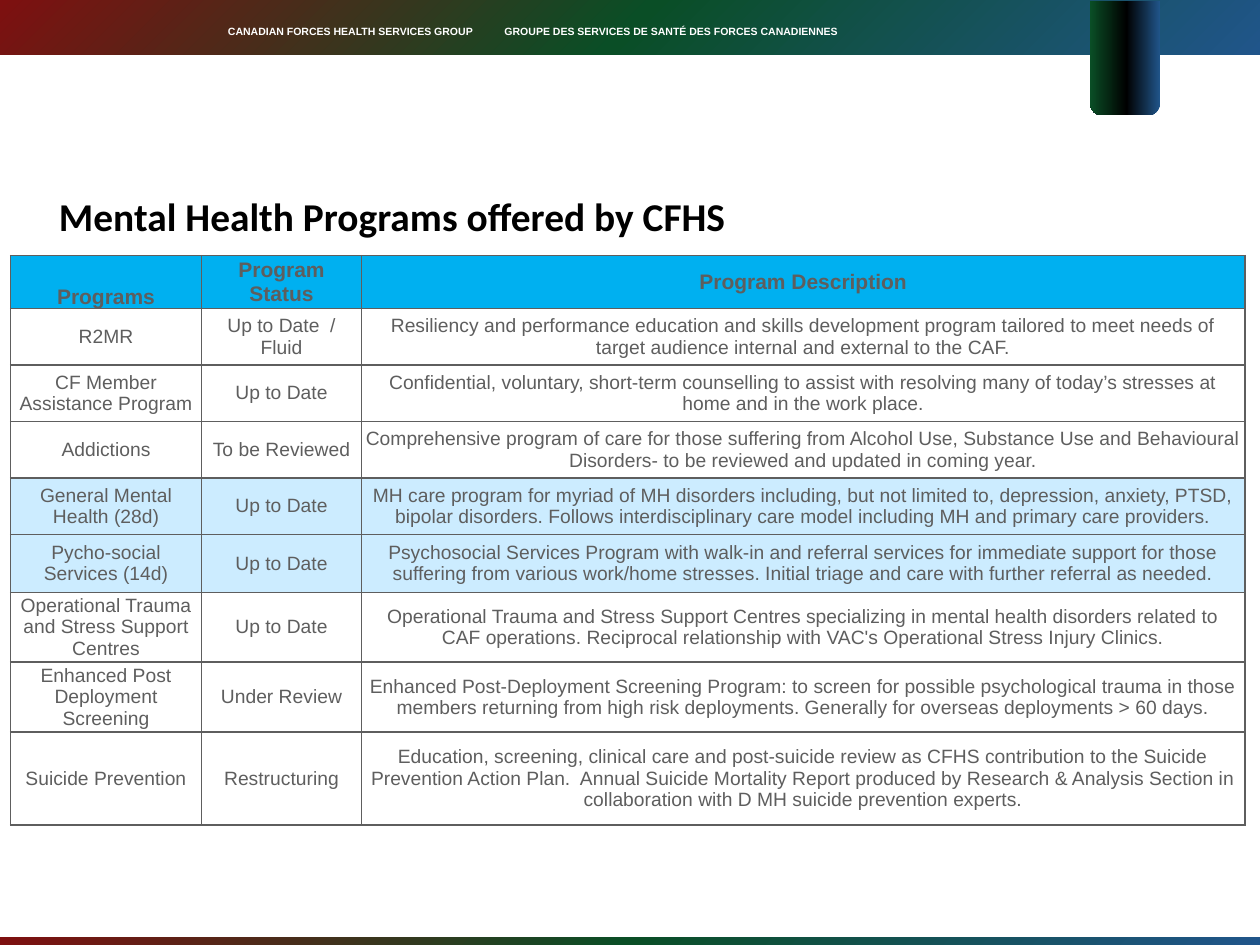
from dataclasses import dataclass

from pptx import Presentation
from pptx.dml.color import RGBColor
from pptx.enum.shapes import MSO_SHAPE
from pptx.enum.text import MSO_ANCHOR, PP_ALIGN
from pptx.oxml import parse_xml
from pptx.oxml.ns import nsdecls
from pptx.util import Pt

RECT = MSO_SHAPE.RECTANGLE
TAB = MSO_SHAPE.ROUND_2_SAME_RECTANGLE
LEFT, CENTER = PP_ALIGN.LEFT, PP_ALIGN.CENTER
MIDDLE, BOTTOM = MSO_ANCHOR.MIDDLE, MSO_ANCHOR.BOTTOM


@dataclass(frozen=True)
class Theme:
    red: str = "7E1010"
    green: str = "0A4E26"
    blue: str = "20558A"
    black: str = "000000"
    white: str = "FFFFFF"
    gray: str = "5E5E5E"
    sky: str = "00B0F0"
    pale: str = "CCECFF"
    body: str = "Arial"
    head: str = "Calibri"
    tiny: float = 6
    small: float = 11
    label: float = 12
    title: float = 22.5


THEME = Theme()


@dataclass(frozen=True)
class Band:
    box: tuple
    stops: tuple
    angle: int = 45
    kind: int = RECT
    turn: int = 0


@dataclass(frozen=True)
class Program:
    name: str
    status: str
    about: str
    height: float
    fill: str = ""


FLAG = ((0, THEME.red), (50, THEME.green), (100, THEME.blue))
BANDS = (
    Band((0, 0, 720, 31), FLAG),
    Band((622.8, 0.6, 40.2, 65.4),
         ((0, THEME.blue), (48, THEME.black), (100, THEME.green)), 0, TAB, 180),
    Band((0, 535.6, 720, 4.4), FLAG),
)
WIDTHS = (109.2, 91.4, 504.8)
HEADS = Program("Programs", "Program Status", "Program Description", 30.3, THEME.sky)
ROWS = (
    Program("R2MR", "Up to Date  / Fluid",
            "Resiliency and performance education and skills development program "
            "tailored to meet needs of target audience internal and external to the CAF.", 32.3),
    Program("CF Member Assistance Program", "Up to Date",
            "Confidential, voluntary, short-term counselling to assist with resolving "
            "many of today’s stresses at home and in the work place.", 32.3),
    Program("Addictions", "To be Reviewed",
            "Comprehensive program of care for those suffering from Alcohol Use, "
            "Substance Use and Behavioural Disorders- to be reviewed and updated "
            "in coming year.", 32.3),
    Program("General Mental Health (28d)", "Up to Date",
            "MH care program for myriad of MH disorders including, but not limited to, "
            "depression, anxiety, PTSD, bipolar disorders. Follows interdisciplinary "
            "care model including MH and primary care providers.", 32.3, THEME.pale),
    Program("Pycho-social Services (14d)", "Up to Date",
            "Psychosocial Services Program with walk-in and referral services for "
            "immediate support for those suffering from various work/home stresses. "
            "Initial triage and care with further referral as needed.", 33, THEME.pale),
    Program("Operational Trauma and Stress Support Centres", "Up to Date",
            "Operational Trauma and Stress Support Centres specializing in mental "
            "health disorders related to CAF operations. Reciprocal relationship "
            "with VAC's Operational Stress Injury Clinics.", 40),
    Program("Enhanced Post Deployment Screening", "Under Review",
            "Enhanced Post-Deployment Screening Program: to screen for possible "
            "psychological trauma in those members returning from high risk "
            "deployments. Generally for overseas deployments > 60 days.", 39.8),
    Program("Suicide Prevention", "Restructuring",
            "Education, screening, clinical care and post-suicide review as CFHS "
            "contribution to the Suicide Prevention Action Plan.  Annual Suicide "
            "Mortality Report produced by Research & Analysis Section in "
            "collaboration with D MH suicide prevention experts.", 53.3),
)


def write(frame, text: str, *, size: float, color: str, font: str = THEME.body,
          bold: bool = False, align=LEFT, space: float = 1, tab: int = 0) -> None:
    para = frame.paragraphs[0]
    para.alignment = align
    para.line_spacing = space
    if tab:
        para._p.get_or_add_pPr().append(parse_xml(
            f'<a:tabLst {nsdecls("a")}><a:tab pos="{Pt(tab)}" algn="l"/></a:tabLst>'))
    run = para.add_run()
    run.text = text
    run.font.size = Pt(size)
    run.font.name = font
    run.font.bold = bold
    run.font.color.rgb = RGBColor.from_string(color)


def add_text(slide, box: tuple, text: str, insets: tuple, **style) -> None:
    frame = slide.shapes.add_textbox(*map(Pt, box)).text_frame
    frame.word_wrap = True
    frame.vertical_anchor = MIDDLE
    frame.margin_left, frame.margin_top, frame.margin_right, frame.margin_bottom = map(Pt, insets)
    write(frame, text, **style)


def add_band(slide, band: Band) -> None:
    shape = slide.shapes.add_shape(band.kind, *map(Pt, band.box))
    shape.rotation = band.turn
    if band.kind == TAB:
        shape.adjustments[0] = 0.18
    stops = "".join(f'<a:gs pos="{pos * 1000}"><a:srgbClr val="{color}"/></a:gs>'
                    for pos, color in band.stops)
    shape._element.spPr.append(parse_xml(
        f'<a:gradFill {nsdecls("a")} rotWithShape="1"><a:gsLst>{stops}</a:gsLst>'
        f'<a:lin ang="{band.angle * 60000}" scaled="0"/></a:gradFill>'))
    shape.line.fill.background()
    shape.shadow.inherit = False


def fill_cell(cell, text: str, fill: str, anchor, **style) -> None:
    cell.margin_left = cell.margin_right = Pt(2.2)
    cell.margin_top = cell.margin_bottom = Pt(0)
    cell.vertical_anchor = anchor
    props = cell._tc.get_or_add_tcPr()
    for side in "LRTB":
        props.append(parse_xml(
            f'<a:ln{side} {nsdecls("a")} w="{Pt(1)}"><a:solidFill>'
            f'<a:srgbClr val="{THEME.gray}"/></a:solidFill></a:ln{side}>'))
    if fill:
        cell.fill.solid()
        cell.fill.fore_color.rgb = RGBColor.from_string(fill)
    else:
        cell.fill.background()
    write(cell.text_frame, text, color=THEME.gray, align=CENTER, **style)


def add_grid(slide, rows: tuple) -> None:
    high = sum(row.height for row in rows)
    table = slide.shapes.add_table(len(rows), len(WIDTHS), Pt(6), Pt(146),
                                   Pt(sum(WIDTHS)), Pt(high)).table
    table.first_row = table.horz_banding = False
    for col, width in zip(table.columns, WIDTHS):
        col.width = Pt(width)
    for i, row in enumerate(rows):
        table.rows[i].height = Pt(row.height)
        head = i == 0
        for j, text in enumerate((row.name, row.status, row.about)):
            fill_cell(table.cell(i, j), text, row.fill,
                      BOTTOM if head and j == 0 else MIDDLE,
                      size=THEME.label if head else THEME.small, bold=head)


def main() -> None:
    deck = Presentation()
    deck.slide_width, deck.slide_height = Pt(720), Pt(540)
    slide = deck.slides.add_slide(deck.slide_layouts[6])
    for band in BANDS:
        add_band(slide, band)
    add_text(slide, (-0.7, 14.4, 610, 7.2),
             "CANADIAN FORCES HEALTH SERVICES GROUP\t"
             "GROUPE DES SERVICES DE SANTÉ DES FORCES CANADIENNES",
             (131, 0, 0, 0), size=THEME.tiny, color=THEME.white, bold=True, tab=158)
    add_grid(slide, (HEADS, *ROWS))
    add_text(slide, (26.6, 104.4, 589, 41), "Mental Health Programs offered by CFHS",
             (7.2, 7.2, 7.2, 7.2), size=THEME.title, color=THEME.black,
             font=THEME.head, bold=True, space=0.9)
    deck.save("out.pptx")


if __name__ == "__main__":
    main()
